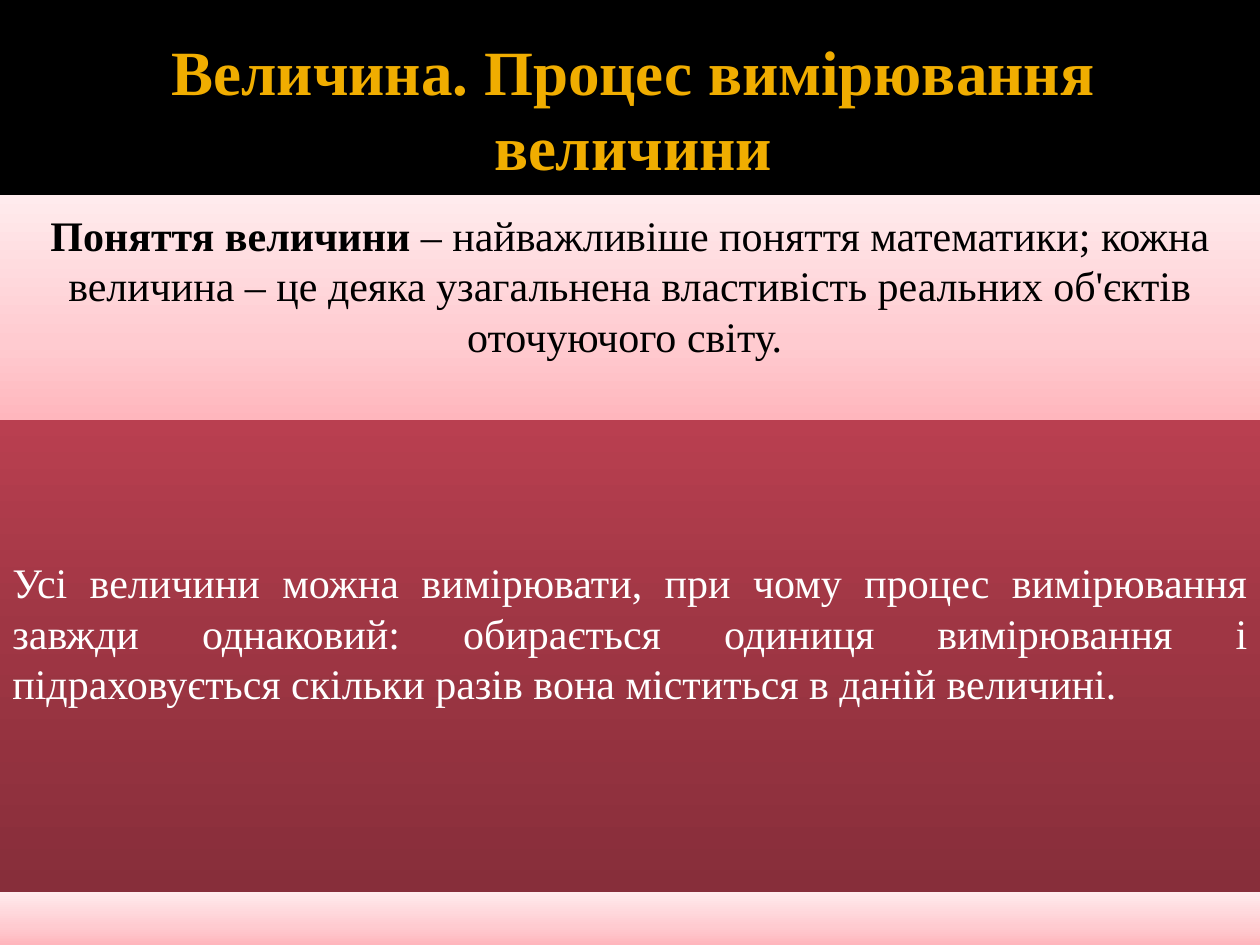
import copy

import pptx
import pptx.dml.color
import pptx.enum.shapes
import pptx.enum.text
import pptx.oxml.ns
import pptx.util

Inches = pptx.util.Inches
Align = pptx.enum.text.PP_ALIGN

COLOURS = {
    "header": "000000",
    "title": "F0AD00",
    "dark_text": "000000",
    "light_text": "FFFFFF",
}
# Gradient stops as (position, colour), running from bottom to top
PINK = [(0, "FFB6BD"), (0.35, "FFCBD0"), (1, "FFEBED")]
CRIMSON = [(0, "872E3A"), (0.55, "9F3644"), (1, "B93F50")]


def rgb(value):
    return pptx.dml.color.RGBColor.from_string(value)


class SlideBuilder:
    font_name = "Times New Roman"
    title_size = 36
    body_size = 24

    def __init__(self, deck):
        self.page = deck.slides.add_slide(deck.slide_layouts[5])
        self.width = deck.slide_width

    def style_paragraph(self, para, size, colour, align):
        para.alignment = align
        para.font.name = self.font_name
        para.font.size = pptx.util.Pt(size)
        para.font.color.rgb = rgb(COLOURS[colour])

    def set_frame(self, frame, left, top, right, bottom):
        frame.word_wrap = True
        frame.auto_size = pptx.enum.text.MSO_AUTO_SIZE.NONE
        frame.vertical_anchor = pptx.enum.text.MSO_ANCHOR.MIDDLE
        frame.margin_left, frame.margin_top = Inches(left), Inches(top)
        frame.margin_right, frame.margin_bottom = Inches(right), Inches(bottom)

    def band(self, top, height):
        box = self.page.shapes.add_shape(
            pptx.enum.shapes.MSO_SHAPE.RECTANGLE,
            0, Inches(top), self.width, Inches(height))
        box.shadow.inherit = False
        box.line.fill.background()
        return box

    def solid_band(self, top, height, colour):
        box = self.band(top, height)
        box.fill.solid()
        box.fill.fore_color.rgb = rgb(COLOURS[colour])

    def gradient_band(self, top, height, stops):
        box = self.band(top, height)
        box.fill.gradient()
        box.fill.gradient_angle = 90
        stop_list = box._element.spPr.find(".//" + pptx.oxml.ns.qn("a:gsLst"))
        stop_list.append(copy.deepcopy(stop_list[0]))
        for stop, (position, colour) in zip(box.fill.gradient_stops, stops):
            stop.position = position
            stop.color.rgb = rgb(colour)
        return box

    def title(self, text):
        box = self.page.shapes.title
        box.left, box.top = Inches(0.5), Inches(0.17)
        box.width, box.height = Inches(9), Inches(1.37)
        self.set_frame(box.text_frame, 0.1, 0.05, 0.05, 0.05)
        box.text_frame.text = text
        para = box.text_frame.paragraphs[0]
        self.style_paragraph(para, self.title_size, "title", Align.CENTER)
        para.font.bold = True
        # Bring the title in front of the header band
        self.page.shapes._spTree.append(box._element)

    def text_band(self, top, height, stops, spans, colour, align):
        """Spans are (text, bold) pairs of a single paragraph."""
        frame = self.gradient_band(top, height, stops).text_frame
        self.set_frame(frame, 0.1, 0.1, 0.1, 0.47)
        para = frame.paragraphs[0]
        self.style_paragraph(para, self.body_size, colour, align)
        for text, bold in spans:
            span = para.add_run()
            span.text = text
            span.font.bold = bold


def main():
    deck = pptx.Presentation()
    deck.slide_width, deck.slide_height = Inches(10), Inches(7.5)
    builder = SlideBuilder(deck)

    # Header
    builder.solid_band(0, 1.57, "header")
    builder.title("Величина. Процес вимірювання величини")

    # Definition
    builder.text_band(1.55, 1.79, PINK, [
        ("Поняття величини ", True),
        ("– найважливіше поняття математики; кожна величина – це деяка "
         "узагальнена властивість реальних об'єктів оточуючого світу. ", False),
    ], "dark_text", Align.CENTER)

    # Measuring process
    builder.text_band(3.33, 3.75, CRIMSON, [
        ("Усі величини можна вимірювати, при чому процес вимірювання завжди "
         "однаковий: обирається одиниця вимірювання і підраховується скільки "
         "разів вона міститься в даній величині.", False),
    ], "light_text", Align.JUSTIFY)

    # Footer strip
    builder.gradient_band(7.08, 0.42, PINK)

    deck.save("out.pptx")


if __name__ == "__main__":
    main()
